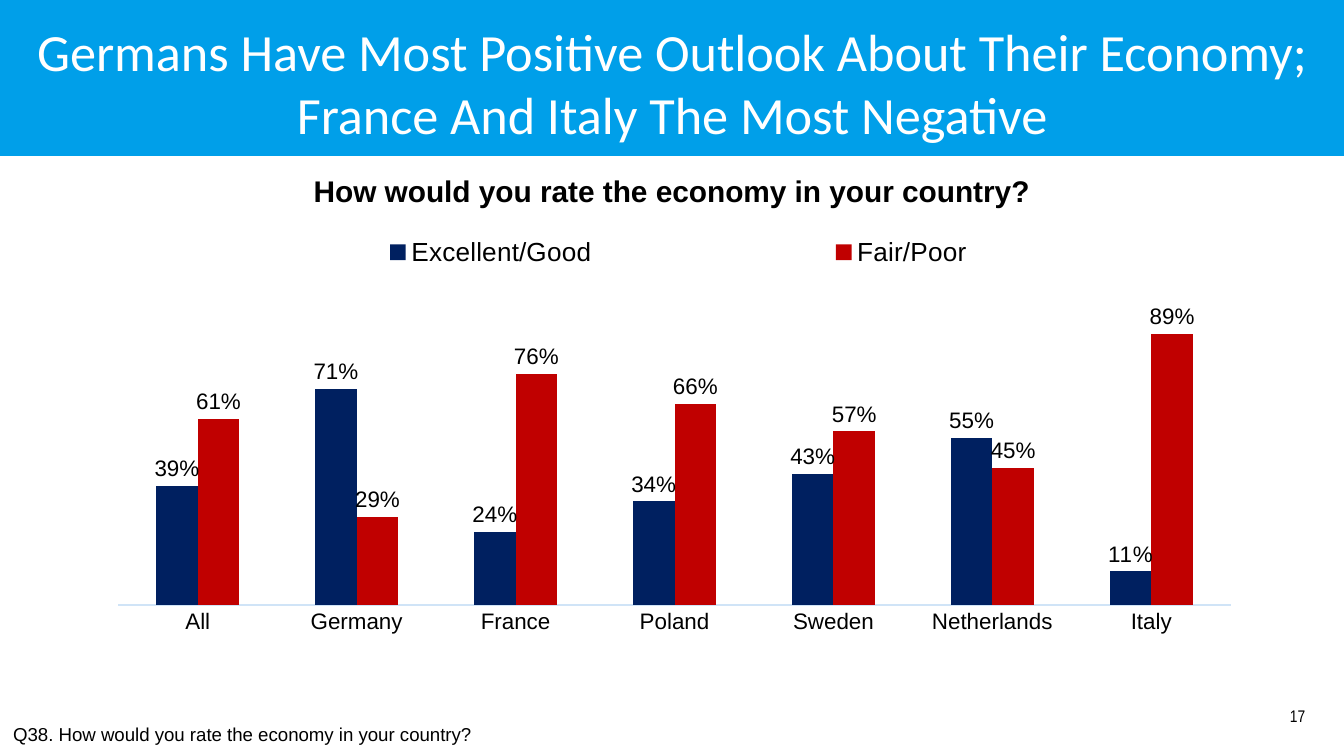
import pptx
import pptx.chart.data
import pptx.dml.color
import pptx.enum.chart
import pptx.enum.shapes
import pptx.enum.text
import pptx.oxml
import pptx.oxml.ns
import pptx.util

ALIGN = pptx.enum.text.PP_ALIGN
ANCHOR = pptx.enum.text.MSO_ANCHOR

# A 16:9 slide on a grid of 100 columns by 100 rows
presentation = pptx.Presentation()
presentation.slide_width = pptx.util.Inches(10)
presentation.slide_height = presentation.slide_width * 9 // 16
COLUMN = presentation.slide_width / 100
ROW = presentation.slide_height / 100


def color(hex_string):
    return pptx.dml.color.RGBColor.from_string(hex_string)


def write(text, left, top, width, height, size, font="Arial", fill="000000", bold=False,
          align=ALIGN.CENTER, anchor=ANCHOR.TOP, wrap=True, shape=None):
    """Write text in a box placed by columns and rows."""
    shape = shape or slide.shapes.add_textbox(0, 0, 0, 0)
    shape.left, shape.top = int(left * COLUMN), int(top * ROW)
    shape.width, shape.height = int(width * COLUMN), int(height * ROW)
    frame = shape.text_frame
    frame.text = text
    frame.word_wrap = wrap
    frame.auto_size = pptx.enum.text.MSO_AUTO_SIZE.NONE
    frame.vertical_anchor = anchor
    paragraph = frame.paragraphs[0]
    paragraph.alignment = align
    paragraph.font.name, paragraph.font.size = font, pptx.util.Pt(size)
    paragraph.font.bold = bold
    paragraph.font.color.rgb = color(fill)


slide = presentation.slides.add_slide(presentation.slide_layouts[5])
title = slide.shapes.title

# Title banner, placed behind the title
banner = slide.shapes.add_shape(pptx.enum.shapes.MSO_SHAPE.RECTANGLE, 0, 0,
                                presentation.slide_width, int(20.44 * ROW))
banner.shadow.inherit = False
banner.fill.solid()
banner.fill.fore_color.rgb = color("009FE9")
banner.line.color.rgb = color("009FE9")
banner.line.width = pptx.util.Pt(2)
title.element.addprevious(banner.element)
write("Germans Have Most Positive Outlook About Their Economy; France And Italy The Most Negative",
      0, 6.8, 100, 8.2, 28, font="Calibri", fill="FFFFFF", anchor=ANCHOR.MIDDLE, shape=title)

# Question, footnote and page number
question = "How would you rate the economy in your country?"
write(question, 18.75, 21.9, 62.5, 6.6, 16, bold=True)
write("Q38. " + question, 0, 94.3, 66.7, 5.5, 10, align=ALIGN.LEFT, anchor=ANCHOR.MIDDLE)
write("17", 94.9, 92.5, 3.3, 4.4, 9, font="Arial Narrow", wrap=False)

# Chart data
data = pptx.chart.data.CategoryChartData(number_format="0%")
data.categories = ["All", "Germany", "France", "Poland", "Sweden", "Netherlands", "Italy"]
data.add_series("Excellent/Good", [0.39, 0.71, 0.24, 0.34, 0.43, 0.55, 0.11])
data.add_series("Fair/Poor", [0.61, 0.29, 0.76, 0.66, 0.57, 0.45, 0.89])
chart = slide.shapes.add_chart(
    pptx.enum.chart.XL_CHART_TYPE.COLUMN_CLUSTERED, int(1.65 * COLUMN), int(28.45 * ROW),
    int(96.7 * COLUMN), int(61.5 * ROW), data).chart
chart.has_title = False
chart.font.name, chart.font.size = "Arial", pptx.util.Pt(10)
chart.font.color.rgb = color("000000")

# Axes
category_axis, value_axis = chart.category_axis, chart.value_axis
category_axis.major_tick_mark = pptx.enum.chart.XL_TICK_MARK.NONE
category_axis.format.line.color.rgb = color("D0E4F7")
category_axis.format.line.width = pptx.util.Pt(0.75)
value_axis.minimum_scale, value_axis.maximum_scale = 0, 1
value_axis.has_major_gridlines = False
value_axis.visible = False

# Columns
plot = chart.plots[0]
plot.gap_width, plot.overlap = 182, 0
plot.vary_by_categories = False
for series, fill in zip(plot.series, ["002060", "C00000"]):
    series.format.fill.solid()
    series.format.fill.fore_color.rgb = color(fill)
    labels = series.data_labels
    labels.show_value = True
    labels.position = pptx.enum.chart.XL_LABEL_POSITION.OUTSIDE_END
    labels.number_format, labels.number_format_is_linked = "0%", False

# Legend
chart.has_legend = True
legend = chart.legend
legend.position = pptx.enum.chart.XL_LEGEND_POSITION.RIGHT
legend.include_in_layout = False

# Fonts of the chart's parts
fonts = [(category_axis.tick_labels.font, 12), (legend.font, 14)]
fonts += [(series.data_labels.font, 12) for series in plot.series]
for font, size in fonts:
    font.name, font.size = "Arial", pptx.util.Pt(size)
    font.color.rgb = color("000000")

# Manual layout of plot area and legend, as shares of the chart
plot_area = chart._chartSpace.chart.plotArea
for parent, index, target, box in [
        (plot_area, 0, '<c:layoutTarget val="inner"/>', (0.074, 0.184, 0.856, 0.655)),
        (legend._element, 1, "", (0.102, 0.03, 0.806, 0.1))]:
    for old_layout in parent.findall(pptx.oxml.ns.qn("c:layout")):
        parent.remove(old_layout)
    modes = '<c:xMode val="edge"/><c:yMode val="edge"/>'
    sizes = "".join(f'<c:{name} val="{share}"/>' for name, share in zip("xywh", box))
    parent.insert(index, pptx.oxml.parse_xml(
        f'<c:layout {pptx.oxml.ns.nsdecls("c")}><c:manualLayout>{target}{modes}{sizes}</c:manualLayout></c:layout>'))

presentation.save("out.pptx")
